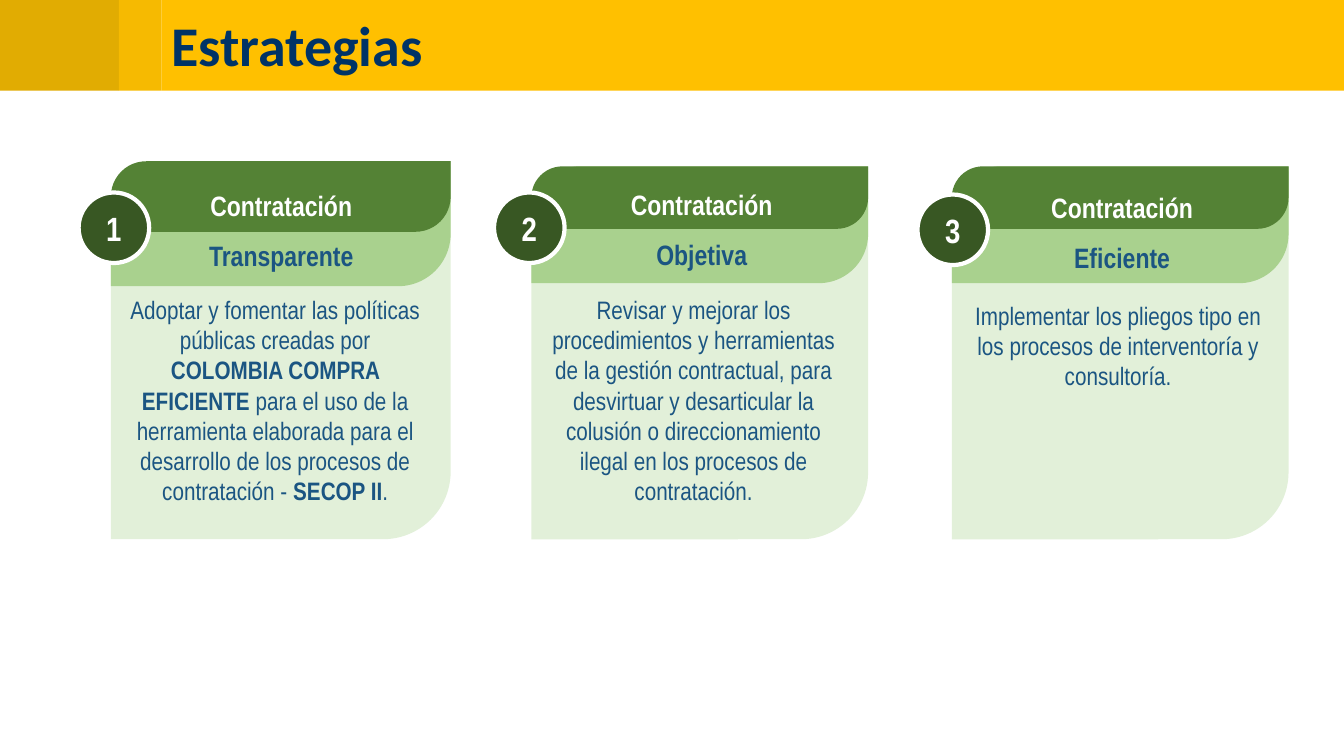
from dataclasses import dataclass

from pptx import Presentation
from pptx.dml.color import RGBColor
from pptx.enum.shapes import MSO_SHAPE
from pptx.enum.text import MSO_ANCHOR, MSO_AUTO_SIZE, PP_ALIGN
from pptx.util import Inches, Pt

RECTANGLE = MSO_SHAPE.RECTANGLE
OVAL = MSO_SHAPE.OVAL
LEAF = MSO_SHAPE.ROUND_2_DIAG_RECTANGLE
CENTER, LEFT = PP_ALIGN.CENTER, PP_ALIGN.LEFT
TOP, MIDDLE = MSO_ANCHOR.TOP, MSO_ANCHOR.MIDDLE

WHITE = RGBColor(0xFF, 0xFF, 0xFF)
GOLD = RGBColor(0xFF, 0xC0, 0x00)
DARK_GOLD = RGBColor(0xE1, 0xAC, 0x02)
MID_GOLD = RGBColor(0xF6, 0xBA, 0x01)
NAVY = RGBColor(0x00, 0x33, 0x66)
BLUE = RGBColor(0x1B, 0x55, 0x82)
PALE_GREEN = RGBColor(0xE2, 0xF0, 0xD9)
LIGHT_GREEN = RGBColor(0xA9, 0xD1, 0x8E)
GREEN = RGBColor(0x54, 0x82, 0x35)
DARK_GREEN = RGBColor(0x38, 0x57, 0x23)

SLIDE_WIDTH, SLIDE_HEIGHT = 13.33, 7.5
BANNER_HEIGHT = 0.9
FIRST_COLUMN, COLUMN_STEP = 1.1, 4.17
CARD_BOTTOM = 5.35
SUBTITLE_HEIGHT = 0.54
BADGE_SIZE = 0.7
HEADING_WIDTH, HEADING_HEIGHT = 1.64, 0.94


@dataclass
class Card:
    """One strategy; inset and badge_left are measured from the card's left."""
    subtitle: str
    body: list
    top: float
    width: float
    header_height: float
    badge_left: float
    badge_top: float
    heading_top: float
    inset: float
    text_top: float
    text_width: float


CARDS = [
    Card("Transparente",
         [("Adoptar y fomentar las políticas públicas creadas por ", False),
          ("COLOMBIA COMPRA EFICIENTE ", True),
          ("para el uso de la herramienta elaborada para el desarrollo "
           "de los procesos de contratación - ", False),
          ("SECOP II", True), (".", False)],
         1.6, 3.37, 0.7, -0.32, 1.91, 1.82, 0.03, 2.87, 3.2),
    Card("Objetiva",
         [("Revisar y mejorar los procedimientos y herramientas de la gestión "
           "contractual, para desvirtuar y desarticular la colusión o "
           "direccionamiento ilegal en los procesos de contratación.", False)],
         1.65, 3.34, 0.62, -0.37, 1.91, 1.81, -0.02, 2.87, 3.26),
    Card("Eficiente",
         [("Implementar los pliegos tipo en los procesos de interventoría "
           "y consultoría.", False)],
         1.65, 3.34, 0.62, -0.34, 1.93, 1.84, 0.04, 2.93, 3.22),
]


def add_block(slide, kind, left, top, width, height, fill, corner=None):
    shape = slide.shapes.add_shape(
        kind, Inches(left), Inches(top), Inches(width), Inches(height))
    shape.shadow.inherit = False
    shape.fill.solid()
    shape.fill.fore_color.rgb = fill
    shape.line.fill.background()
    if corner is not None:
        shape.adjustments[0] = corner
        shape.adjustments[1] = 0
    return shape


def add_text_box(slide, left, top, width, height):
    return slide.shapes.add_textbox(
        Inches(left), Inches(top), Inches(width), Inches(height))


def write(paragraph, text, *, size, color, bold=False, font="Arial Narrow",
          align=CENTER):
    """Append a formatted run to the paragraph."""
    paragraph.alignment = align
    run = paragraph.add_run()
    run.text = text
    run.font.name = font
    run.font.size = Pt(size)
    run.font.bold = bold
    run.font.color.rgb = color


def add_banner(slide, text, width, height):
    edges = [0, 1.18, 1.6, width]
    for start, end, color in zip(edges, edges[1:], (DARK_GOLD, MID_GOLD, GOLD)):
        add_block(slide, RECTANGLE, start, 0, end - start, height, color)
    title = slide.shapes.title
    title.left, title.top = Inches(edges[2]), Inches(0.03)
    title.width, title.height = Inches(11.09), Inches(height)
    frame = title.text_frame
    frame.word_wrap = True
    frame.auto_size = MSO_AUTO_SIZE.NONE
    frame.vertical_anchor = MIDDLE
    paragraph = frame.paragraphs[0]
    paragraph.line_spacing = 0.9
    write(paragraph, text, size=40, color=NAVY, bold=True, font="Calibri",
          align=LEFT)
    # Bring the title in front of the banner
    title.element.getparent().append(title.element)


def add_badge(slide, number, left, top):
    badge = add_block(slide, OVAL, left, top, BADGE_SIZE, BADGE_SIZE, DARK_GREEN)
    badge.line.color.rgb = WHITE
    badge.line.width = Pt(3)
    badge.text_frame.vertical_anchor = MIDDLE
    write(badge.text_frame.paragraphs[0], str(number), size=24, color=WHITE,
          bold=True)


def add_heading(slide, subtitle, center, top):
    box = add_text_box(slide, center - HEADING_WIDTH / 2, top,
                       HEADING_WIDTH, HEADING_HEIGHT)
    frame = box.text_frame
    frame.word_wrap = False
    write(frame.paragraphs[0], "Contratación", size=20, color=WHITE, bold=True)
    paragraph = frame.add_paragraph()
    paragraph.space_before = Pt(12)
    write(paragraph, subtitle, size=20, color=BLUE, bold=True)


def add_card(slide, number, card, left):
    body_top = card.top + 0.05
    subtitle_bottom = card.header_height + SUBTITLE_HEIGHT
    layers = [
        (body_top, CARD_BOTTOM - body_top, PALE_GREEN, 0.199),
        (card.top, subtitle_bottom, LIGHT_GREEN, 0.421),
        (card.top, card.header_height, GREEN, 0.5),
    ]
    for top, height, color, corner in layers:
        add_block(slide, LEAF, left, top, card.width, height, color, corner)
    add_badge(slide, number, left + card.badge_left, card.badge_top)
    add_heading(slide, card.subtitle, left + 1.69, card.heading_top)

    box = add_text_box(slide, left + card.inset, card.text_top,
                       card.text_width, CARD_BOTTOM - card.text_top)
    frame = box.text_frame
    frame.word_wrap = True
    frame.vertical_anchor = TOP
    for text, bold in card.body:
        write(frame.paragraphs[0], text, size=18, color=BLUE, bold=bold)


def main():
    presentation = Presentation()
    presentation.slide_width = Inches(SLIDE_WIDTH)
    presentation.slide_height = Inches(SLIDE_HEIGHT)
    title_only = presentation.slide_layouts.get_by_name("Title Only")
    slide = presentation.slides.add_slide(title_only)
    add_banner(slide, "Estrategias", SLIDE_WIDTH, BANNER_HEIGHT)
    for index, card in enumerate(CARDS):
        add_card(slide, index + 1, card, FIRST_COLUMN + index * COLUMN_STEP)
    presentation.save("out.pptx")


if __name__ == "__main__":
    main()
